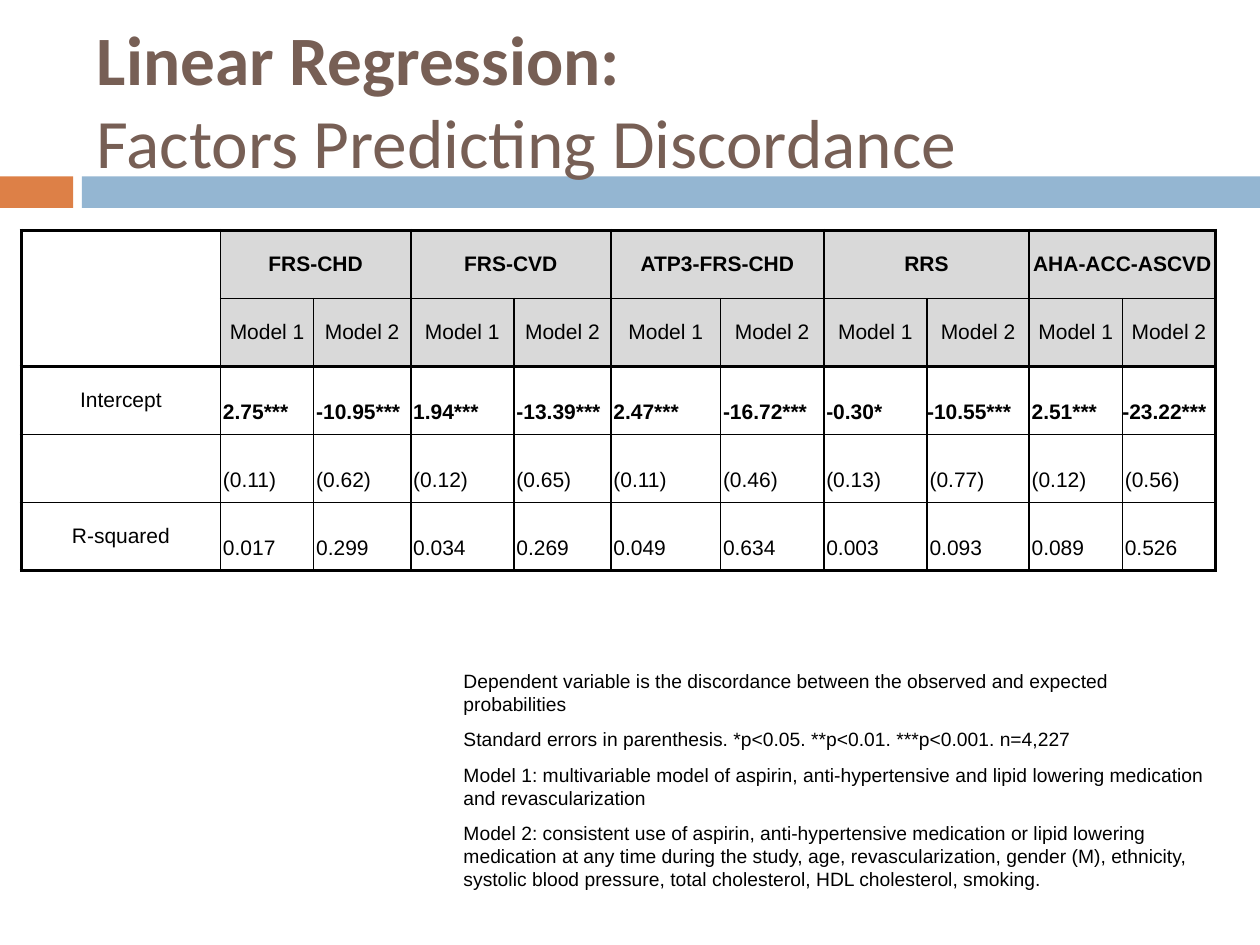
from dataclasses import dataclass

from lxml import etree
from pptx import Presentation
from pptx.dml.color import RGBColor
from pptx.enum.shapes import MSO_SHAPE
from pptx.enum.text import MSO_ANCHOR, PP_ALIGN
from pptx.oxml.ns import qn
from pptx.util import Inches, Pt

RECT = MSO_SHAPE.RECTANGLE
MIDDLE = MSO_ANCHOR.MIDDLE
CENTER, LEFT = PP_ALIGN.CENTER, PP_ALIGN.LEFT


@dataclass(frozen=True)
class Theme:
    orange: str = "DD8047"
    blue: str = "94B6D2"
    brown: str = "775F55"
    black: str = "000000"
    gray: str = "D9D9D9"
    head: str = "Calibri"
    body: str = "Arial"
    title: float = 39.6
    cell: float = 12
    note: float = 11
    thin: float = 1
    medium: float = 1.5
    thick: float = 2.25


theme = Theme()


def style(par, face, size, color, bold=False):
    for run in par.runs:
        run.font.name, run.font.size, run.font.bold = face, Pt(size), bold
        run.font.color.rgb = RGBColor.from_string(color)


def border(cell, side, width):
    line = etree.SubElement(cell._tc.get_or_add_tcPr(), qn("a:ln" + side), w=str(Pt(width)))
    fill = etree.SubElement(line, qn("a:solidFill"))
    etree.SubElement(fill, qn("a:srgbClr"), val=theme.black)


prs = Presentation()
prs.slide_width, prs.slide_height = Inches(10), Inches(7.5)
slide = prs.slides.add_slide(prs.slide_layouts[6])

# Accent bars
for left, width, color in [(0, 0.58, theme.orange), (0.65, 9.35, theme.blue)]:
    bar = slide.shapes.add_shape(RECT, Inches(left), Inches(1.4), Inches(width), Inches(0.25))
    bar.shadow.inherit = False
    bar.fill.solid()
    bar.fill.fore_color.rgb = RGBColor.from_string(color)
    bar.line.fill.background()

# Title
box = slide.shapes.add_textbox(Inches(0.67), Inches(0.25), Inches(8.92), Inches(1.08))
frame = box.text_frame
frame.word_wrap = True
frame.vertical_anchor = MIDDLE
frame.text = "Linear Regression:\nFactors Predicting Discordance"
for i, par in enumerate(frame.paragraphs):
    style(par, theme.head, theme.title, theme.brown, bold=i == 0)

# Table data: each score has two models
scores = ["FRS-CHD", "FRS-CVD", "ATP3-FRS-CHD", "RRS", "AHA-ACC-ASCVD"]
rows = [
    [""] + [text for score in scores for text in (score, "")],
    [""] + ["Model 1", "Model 2"] * len(scores),
    ["Intercept", "2.75***", "-10.95***", "1.94***", "-13.39***", "2.47***",
     "-16.72***", "-0.30*", "-10.55***", "2.51***", "-23.22***"],
    ["", "(0.11)", "(0.62)", "(0.12)", "(0.65)", "(0.11)",
     "(0.46)", "(0.13)", "(0.77)", "(0.12)", "(0.56)"],
    ["R-squared", "0.017", "0.299", "0.034", "0.269", "0.049",
     "0.634", "0.003", "0.093", "0.089", "0.526"],
]
widths = [1.58, 0.74, 0.77, 0.82, 0.77, 0.87, 0.82, 0.82, 0.81, 0.74, 0.74]
high, wide = len(rows), len(widths)
tight = [(2, 8), (2, 10)]  # long values that need the full cell width

# Rules between rows and columns
across = [theme.thick if r in (0, 2, high) else theme.thin for r in range(high + 1)]
down = [theme.medium if c % 2 and c > 1 else theme.thin for c in range(wide + 1)]
down[0] = down[wide] = theme.thick

# Table grid
table = slide.shapes.add_table(high, wide, Inches(0.17), Inches(1.83),
                               Inches(9.48), Inches(2.7)).table
table.first_row = table.horz_banding = False
for col, width in zip(table.columns, widths):
    col.width = Inches(width)
for row in table.rows:
    row.height = Inches(0.54)
table.cell(0, 0).merge(table.cell(1, 0))
for c in range(1, wide, 2):
    table.cell(0, c).merge(table.cell(0, c + 1))

# Table cells
for r, texts in enumerate(rows):
    for c, text in enumerate(texts):
        cell = table.cell(r, c)
        if cell.is_spanned:
            continue
        right = c + (cell.span_width if cell.is_merge_origin else 1)
        base = r + (cell.span_height if cell.is_merge_origin else 1)
        for side, width in [("L", down[c]), ("R", down[right]),
                            ("T", across[r]), ("B", across[base])]:
            border(cell, side, width)
        value = r > 1 and c > 0
        if r < 2 and c > 0:
            cell.fill.solid()
            cell.fill.fore_color.rgb = RGBColor.from_string(theme.gray)
        else:
            cell.fill.background()
        inset = 0 if r == 1 or (r, c) in tight else 0.02 if value else 0.01
        cell.margin_left = cell.margin_right = Inches(inset)
        cell.margin_top = cell.margin_bottom = 0
        cell.vertical_anchor = MIDDLE
        cell.text = text
        par = cell.text_frame.paragraphs[0]
        par.alignment = LEFT if value else CENTER
        if value:
            par.line_spacing = 2.0
        style(par, theme.body, theme.cell, theme.black, bold=r == 0 or (r == 2 and c > 0))

# Notes under the table
notes = [
    "Dependent variable is the discordance between the observed and expected probabilities",
    "Standard errors in parenthesis. *p<0.05. **p<0.01. ***p<0.001. n=4,227",
    "Model 1: multivariable model of aspirin, anti-hypertensive and lipid lowering "
    "medication and revascularization",
    "Model 2: consistent use of aspirin, anti-hypertensive medication or lipid lowering "
    "medication at any time during the study, age, revascularization, gender (M), "
    "ethnicity, systolic blood pressure, total cholesterol, HDL cholesterol, smoking.",
]
box = slide.shapes.add_textbox(Inches(3.58), Inches(5.25), Inches(6.08), Inches(1.88))
frame = box.text_frame
frame.word_wrap = True
frame.vertical_anchor = MIDDLE
frame.text = "\n".join(notes)
for i, par in enumerate(frame.paragraphs):
    par.space_before = Pt(7 if i else 0)
    style(par, theme.body, theme.note, theme.black)

prs.save("out.pptx")
